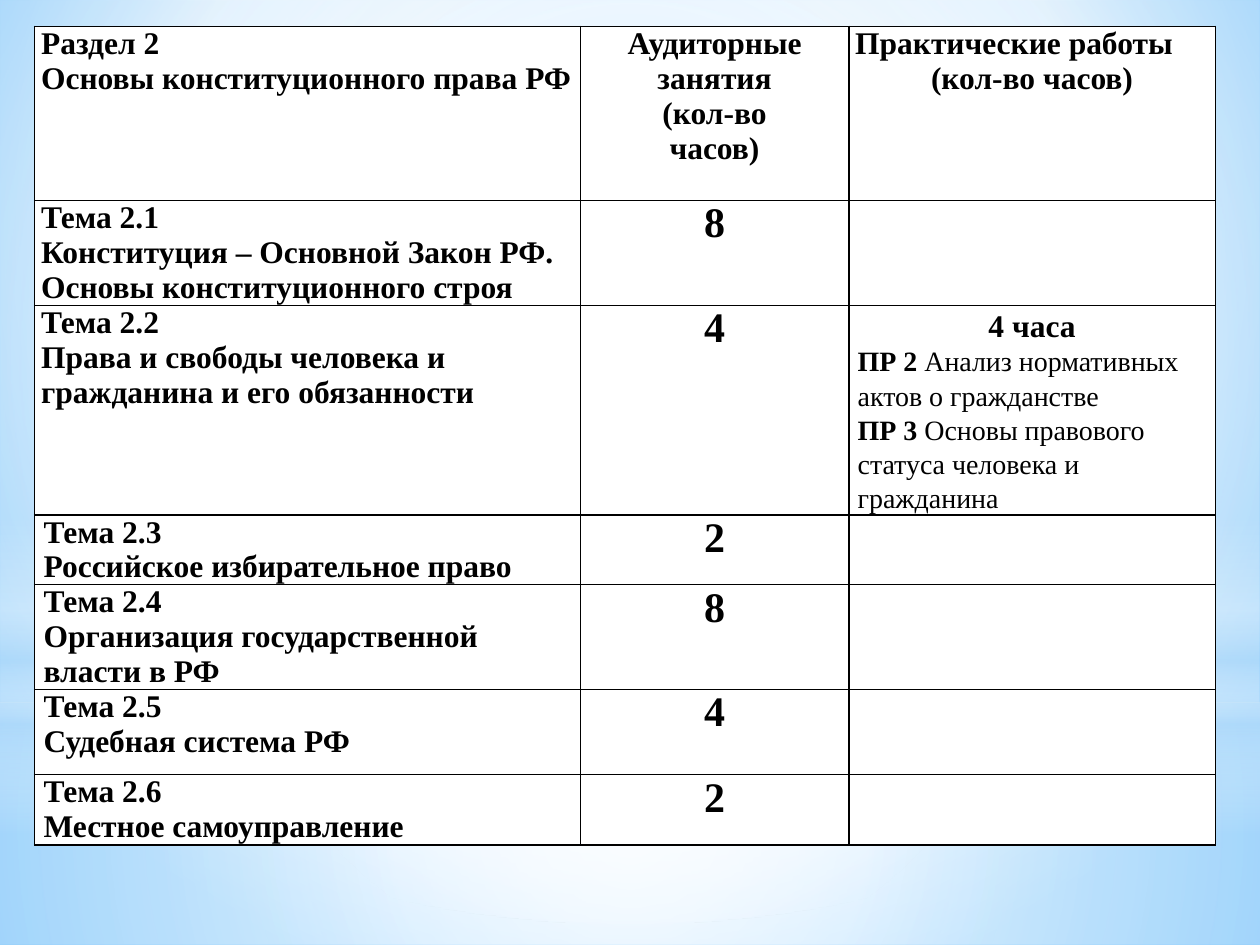
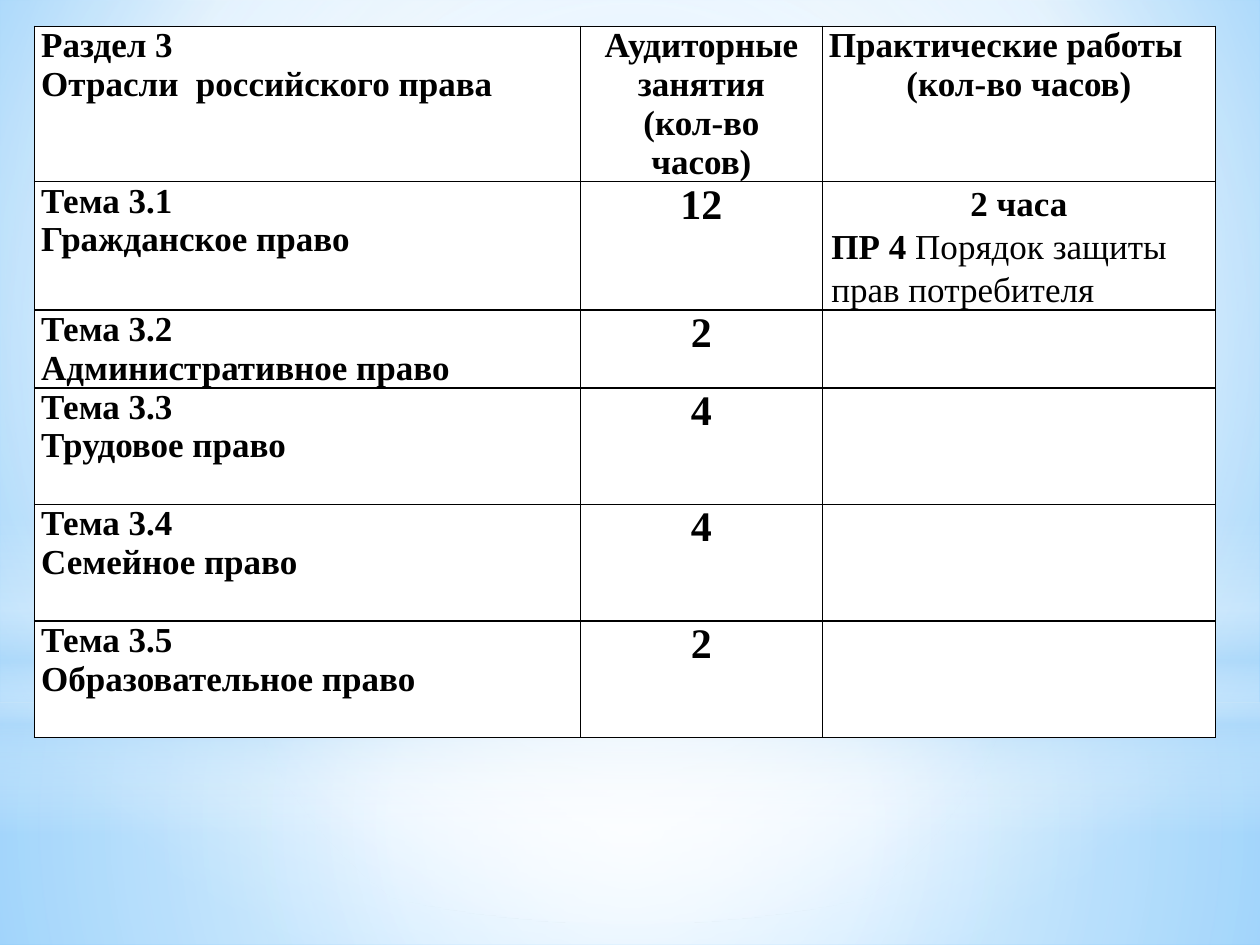
"""Build two slides with tables of course sections, topics and hours."""
from dataclasses import dataclass

import pptx
import pptx.dml.color
import pptx.enum.shapes
import pptx.enum.text
import pptx.oxml
import pptx.oxml.ns
import pptx.presentation
import pptx.util
from pptx.util import Cm

RGBColor = pptx.dml.color.RGBColor
Shape = pptx.enum.shapes.MSO_SHAPE
CENTER = pptx.enum.text.PP_ALIGN.CENTER
LEFT = pptx.enum.text.PP_ALIGN.LEFT
qn = pptx.oxml.ns.qn

BLACK = RGBColor(0x00, 0x00, 0x00)
WHITE = RGBColor(0xFF, 0xFF, 0xFF)
PALE_BLUE = RGBColor(0xB4, 0xDC, 0xFA)
SKY = RGBColor(0x9E, 0xD5, 0xFF)
DEEP_SKY = RGBColor(0x5B, 0xB9, 0xFF)
FONT = "Times New Roman"
HOURS_SIZE = 24
NARROW, WIDE = Cm(0.13), Cm(0.18)
LINEAR = '<a:lin ang="5400000" scaled="0"/>'


@dataclass(frozen=True)
class Stop:
    pos: int
    color: RGBColor
    opacity: int = 100


@dataclass(frozen=True)
class Glow:
    kind: Shape
    top: float
    height: float
    stops: list[Stop]
    course: str


@dataclass(frozen=True)
class Para:
    text: str
    size: float
    align: pptx.enum.text.PP_ALIGN = LEFT
    lead: str = ""
    spacing: float | None = None


@dataclass(frozen=True)
class Topic:
    number: str
    name: str
    hours: int
    height: float
    practice: tuple[Para, ...] = ()
    inset: int = NARROW


@dataclass(frozen=True)
class Section:
    number: int
    name: str
    size: int
    head_height: float
    widths: tuple[float, ...]
    topics: list[Topic]


def circle(left: int, top: int, right: int, bottom: int) -> str:
    return (f'<a:path path="circle"><a:fillToRect l="{left}000" t="{top}000" '
            f'r="{right}000" b="{bottom}000"/></a:path>')


MIDDLE = circle(50, 50, 50, 50)
BACKGROUND = [Stop(0, SKY), Stop(60, WHITE), Stop(100, DEEP_SKY)]
GLOWS = [
    Glow(Shape.RECTANGLE, 14.17, 4.88,
         [Stop(0, WHITE, 91), Stop(37, WHITE, 76), Stop(100, PALE_BLUE, 79)], MIDDLE),
    Glow(Shape.RECTANGLE, 0, 14.17,
         [Stop(0, WHITE, 89), Stop(48, WHITE, 62), Stop(100, PALE_BLUE, 79)], MIDDLE),
    Glow(Shape.RECTANGLE, 10.46, 6.35,
         [Stop(0, WHITE, 0), Stop(29, WHITE, 30), Stop(45, PALE_BLUE, 40),
          Stop(55, WHITE, 26), Stop(65, PALE_BLUE, 60), Stop(100, WHITE, 0)], LINEAR),
    Glow(Shape.OVAL, 4.45, 14.17, [Stop(0, WHITE), Stop(56, WHITE, 0)], MIDDLE),
]


def practice(hours: str, size: int, *works: tuple[str, str]) -> tuple[Para, ...]:
    title = Para(hours, 18 if size == 16 else size, CENTER, spacing=1.1)
    return (title, *(Para(text, size, lead=lead, spacing=1.1) for lead, text in works))


SECTIONS = [
    Section(2, "Основы конституционного права РФ", 18, 3.51, (11, 5.41, 7.39), [
        Topic("2.1", "Конституция – Основной Закон РФ. Основы конституционного строя",
              8, 2.12),
        Topic("2.2", "Права и свободы человека и гражданина и его обязанности", 4, 4.22,
              practice("4 часа", 16,
                       ("ПР 2 ", "Анализ нормативных актов о гражданстве"),
                       ("ПР 3 ", "Основы правового статуса человека и гражданина"))),
        Topic("2.3", "Российское избирательное право", 2, 1.4, inset=WIDE),
        Topic("2.4", "Организация государственной власти в РФ", 8, 2.1, inset=WIDE),
        Topic("2.5", "Судебная система РФ", 4, 1.72, inset=WIDE),
        Topic("2.6", "Местное самоуправление", 2, 1.42, inset=WIDE),
    ]),
    Section(3, "Отрасли  российского права", 20, 3.12, (11, 4.88, 7.92), [
        Topic("3.1", "Гражданское право", 12, 2.58,
              practice("2 часа", 20, ("ПР 4 ", "Порядок защиты прав потребителя"))),
        Topic("3.2", "Административное право", 2, 1.57),
        Topic("3.3", "Трудовое право", 4, 2.35),
        Topic("3.4", "Семейное право", 4, 2.35),
        Topic("3.5", "Образовательное право", 2, 2.35),
    ]),
]


def paint(fill: pptx.dml.fill.FillFormat, root: pptx.oxml.xmlchemy.BaseOxmlElement,
          stops: list[Stop], course: str) -> None:
    fill.background()
    empty = root.find(".//" + qn("a:noFill"))
    marks = "".join(
        f'<a:gs pos="{s.pos}000"><a:srgbClr val="{s.color}">'
        f'<a:alpha val="{s.opacity}000"/></a:srgbClr></a:gs>' for s in stops)
    grad = pptx.oxml.parse_xml(
        f'<a:gradFill {pptx.oxml.ns.nsdecls("a")} rotWithShape="1">'
        f'<a:gsLst>{marks}</a:gsLst>{course}</a:gradFill>')
    empty.getparent().replace(empty, grad)


def decorate_master(prs: pptx.presentation.Presentation,
                    slide: pptx.slide.Slide) -> None:
    master = prs.slide_master
    paint(master.background.fill, master._element, BACKGROUND, circle(20, 10, 20, 60))
    for i, glow in enumerate(GLOWS):
        sp = slide.shapes.add_shape(glow.kind, 0, Cm(glow.top), prs.slide_width,
                                    Cm(glow.height))
        sp.shadow.inherit = False
        paint(sp.fill, sp._element, glow.stops, glow.course)
        sp.line.fill.background()
        master.shapes._spTree.insert(2 + i, sp._element)


def add_borders(cell: pptx.table._Cell) -> None:
    tc_pr = cell._tc.get_or_add_tcPr()
    for i, side in enumerate(("lnL", "lnR", "lnT", "lnB")):
        tc_pr.insert(i, pptx.oxml.parse_xml(
            f'<a:{side} {pptx.oxml.ns.nsdecls("a")} w="12700"><a:solidFill>'
            f'<a:srgbClr val="{BLACK}"/></a:solidFill></a:{side}>'))


def fill_cell(cell: pptx.table._Cell, paras: tuple[Para, ...], inset: int) -> None:
    cell.fill.solid()
    cell.fill.fore_color.rgb = WHITE
    cell.margin_left = cell.margin_right = inset
    cell.margin_top = cell.margin_bottom = 0
    add_borders(cell)
    tf = cell.text_frame
    for i, para in enumerate(paras):
        p = tf.add_paragraph() if i else tf.paragraphs[0]
        p.alignment = para.align
        p.line_spacing = para.spacing
        p.font.name = FONT
        p.font.size = pptx.util.Pt(para.size)
        p.font.color.rgb = BLACK
        p.font.bold = True
        if para.lead:
            p.add_run().text = para.lead
        r = p.add_run()
        r.text = para.text
        if para.lead:
            r.font.bold = False


def add_section(slide: pptx.slide.Slide, section: Section) -> None:
    size = section.size
    heights = [section.head_height, *(t.height for t in section.topics)]
    table = slide.shapes.add_table(len(heights), len(section.widths), Cm(0.7), Cm(0.53),
                                   Cm(sum(section.widths)), Cm(sum(heights))).table
    table.first_row = table.horz_banding = False
    for column, width in zip(table.columns, section.widths):
        column.width = Cm(width)
    for row, height in zip(table.rows, heights):
        row.height = Cm(height)

    lessons = ("Аудиторные", "занятия", "(кол-во", "часов)")
    rows = [(
        (Para(f"Раздел {section.number}", size), Para(section.name, size)),
        tuple(Para(line, size, CENTER) for line in lessons),
        (Para("Практические работы", size), Para("(кол-во часов)", size, CENTER)),
    )]
    for topic in section.topics:
        rows.append((
            (Para(f"Тема {topic.number}", size), Para(topic.name, size)),
            (Para(str(topic.hours), HOURS_SIZE, CENTER),),
            topic.practice,
        ))
    insets = [NARROW, *(t.inset for t in section.topics)]
    for row, cells, inset in zip(table.rows, rows, insets):
        for cell, paras in zip(row.cells, cells):
            has_work = any(para.lead for para in paras)
            fill_cell(cell, paras, WIDE if has_work else inset)


def main() -> None:
    prs = pptx.Presentation()
    prs.slide_width, prs.slide_height = Cm(25.4), Cm(19.05)
    blank = prs.slide_layouts[6]
    for i, section in enumerate(SECTIONS):
        slide = prs.slides.add_slide(blank)
        if i == 0:
            decorate_master(prs, slide)
        add_section(slide, section)
    prs.save("out.pptx")


if __name__ == "__main__":
    main()
